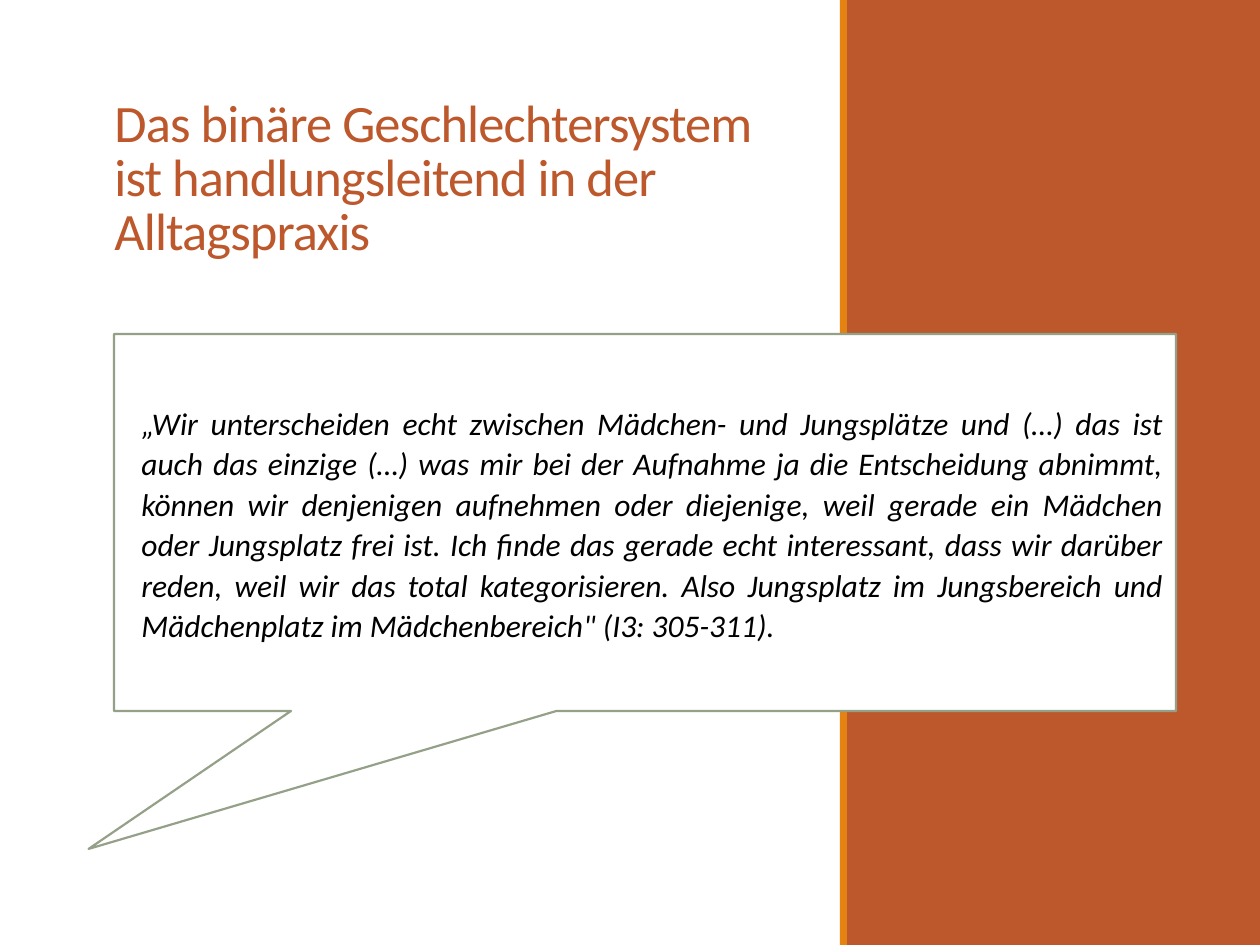
from dataclasses import dataclass

from pptx import Presentation
from pptx import util as u
from pptx.dml.color import RGBColor
from pptx.enum import shapes, text

PX = 914400 / 126
RUST, ORANGE, SAGE, WHITE, BLACK = "BD582C", "E48312", "94A088", "FFFFFF", "000000"

TITLE = "Das binäre Geschlechtersystem ist handlungsleitend in der Alltagspraxis"
QUOTE = (
    "„Wir unterscheiden echt zwischen Mädchen- und Jungsplätze und (…) das ist "
    "auch das einzige (…) was mir bei der Aufnahme ja die Entscheidung abnimmt, "
    "können wir denjenigen aufnehmen oder diejenige, weil gerade ein Mädchen "
    "oder Jungsplatz frei ist. Ich finde das gerade echt interessant, dass wir darüber "
    "reden, weil wir das total kategorisieren. Also Jungsplatz im Jungsbereich und "
    'Mädchenplatz im Mädchenbereich" (I3: 305-311).'
)


@dataclass(frozen=True)
class Box:
    left: int
    top: int
    width: int
    height: int

    def emu(self) -> tuple[int, ...]:
        return tuple(px(n) for n in (self.left, self.top, self.width, self.height))


@dataclass(frozen=True)
class Panel:
    box: Box
    fill: str


PANELS = (
    Panel(Box(842, 0, 418, 945), RUST),
    Panel(Box(840, 0, 7, 945), ORANGE),
)


def px(length: int) -> int:
    return round(length * PX)


def color(value: str) -> RGBColor:
    return RGBColor.from_string(value)


def add_filled(slide, kind, box: Box, fill: str):
    shape = slide.shapes.add_shape(kind, *box.emu())
    shape.shadow.inherit = False
    shape.fill.solid()
    shape.fill.fore_color.rgb = color(fill)
    shape.line.fill.background()
    return shape


def write(shape, words: str, *, size: int, ink: str, anchor, align, line: float,
          after: int = 0, indent: int = 0, italic: bool = False, tracking: int = 0) -> None:
    """Fill the shape with one paragraph; tracking is in hundredths of a point."""
    frame = shape.text_frame
    frame.word_wrap = True
    frame.vertical_anchor = anchor
    paragraph = frame.paragraphs[0]
    paragraph.alignment = align
    paragraph.line_spacing = line
    paragraph.space_after = u.Pt(after)
    properties = paragraph._p.get_or_add_pPr()
    properties.set("marL", str(px(indent)))
    properties.set("indent", "0")
    run = paragraph.add_run()
    run.text = words
    run.font.name = "Calibri"
    run.font.size = u.Pt(size)
    run.font.italic = italic
    run.font.color.rgb = color(ink)
    run._r.get_or_add_rPr().set("spc", str(tracking))


def add_quote(slide, box: Box) -> None:
    callout = add_filled(slide, shapes.MSO_SHAPE.RECTANGULAR_CALLOUT, box, WHITE)
    callout.adjustments[0] = -0.524
    callout.adjustments[1] = 0.866
    callout.line.color.rgb = color(SAGE)
    callout.line.width = u.Pt(1.25)
    write(callout, QUOTE, size=18, ink=BLACK, anchor=text.MSO_ANCHOR.MIDDLE,
          align=text.PP_ALIGN.JUSTIFY, line=1.07, after=8, indent=15, italic=True)


def main() -> None:
    deck = Presentation()
    deck.slide_width, deck.slide_height = px(1260), px(945)
    slide = deck.slides.add_slide(deck.slide_layouts[6])
    slide.background.fill.solid()
    slide.background.fill.fore_color.rgb = color(WHITE)

    title = slide.shapes.add_textbox(*Box(102, 67, 698, 200).emu())
    write(title, TITLE, size=30, ink=RUST, anchor=text.MSO_ANCHOR.BOTTOM,
          align=text.PP_ALIGN.LEFT, line=0.85, tracking=-50)
    for panel in PANELS:
        add_filled(slide, shapes.MSO_SHAPE.RECTANGLE, panel.box, panel.fill)
    add_quote(slide, Box(114, 334, 1062, 377))
    deck.save("out.pptx")


if __name__ == "__main__":
    main()
